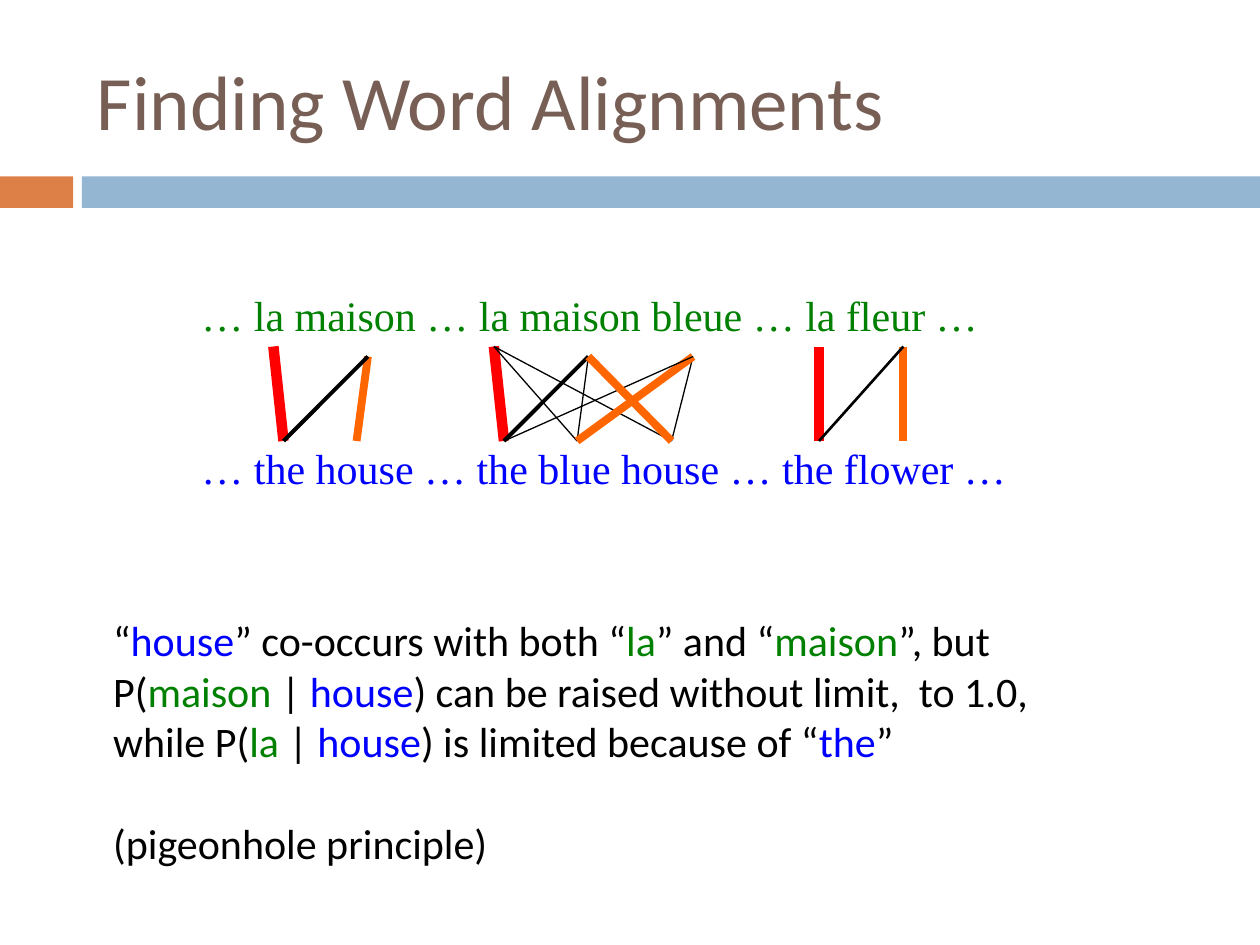
from dataclasses import dataclass

from lxml import etree
from pptx import Presentation
from pptx import util as u
from pptx.dml.color import RGBColor
from pptx.enum import shapes, text
from pptx.oxml.ns import qn


@dataclass(frozen=True)
class Theme:
    title: str = "775F55"
    accent: str = "DD8047"
    band: str = "94B6D2"
    ink: str = "000000"
    french: str = "008000"
    english: str = "0000FF"
    strong: str = "FF0000"
    good: str = "FF6600"
    sans: str = "Calibri"
    serif: str = "Times New Roman"
    title_size: float = 44
    body_size: float = 24


THEME = Theme()


def add_run(p, content, *, font, size, color):
    r = p.add_run()
    r.text = content
    r.font.name = font
    r.font.size = u.Pt(size)
    r.font.color.rgb = RGBColor.from_string(color)


class Builder:
    def __init__(self, slide, theme):
        self.s = slide
        self.theme = theme

    def bar(self, left, top, width, height, color):
        sp = self.s.shapes.add_shape(
            shapes.MSO_SHAPE.RECTANGLE,
            *map(u.Inches, (left, top, width, height)))
        sp.shadow.inherit = False
        sp.fill.solid()
        sp.fill.fore_color.rgb = RGBColor.from_string(color)
        sp.line.fill.background()

    def line(self, start, end, color, weight):
        sp = self.s.shapes.add_connector(
            shapes.MSO_CONNECTOR.STRAIGHT, *map(u.Inches, (*start, *end)))
        sp.line.color.rgb = RGBColor.from_string(color)
        sp.line.width = u.Pt(weight)
        etree.SubElement(sp._element.spPr, qn("a:effectLst"))

    def text(self, box, paragraphs, *, font, size, anchor=text.MSO_ANCHOR.TOP,
             last_gap=0):
        """Each paragraph is a list of (text, color) runs."""
        tf = self.s.shapes.add_textbox(*map(u.Inches, box)).text_frame
        tf.word_wrap = True
        tf.vertical_anchor = anchor
        for i, runs in enumerate(paragraphs):
            p = tf.add_paragraph() if i else tf.paragraphs[0]
            for content, color in runs:
                add_run(p, content, font=font, size=size, color=color)
        p.space_before = u.Pt(last_gap)


def main():
    prs = Presentation()
    prs.slide_width, prs.slide_height = u.Inches(10), u.Inches(7.5)
    t = THEME
    b = Builder(prs.slides.add_slide(prs.slide_layouts[6]), t)

    # Header band and title
    b.bar(0, 1.4, 0.58, 0.25, t.accent)
    b.bar(0.65, 1.4, 9.35, 0.25, t.band)
    b.text((0.67, 0.25, 8.92, 1.08), [[("Finding Word Alignments", t.title)]],
           font=t.sans, size=t.title_size, anchor=text.MSO_ANCHOR.MIDDLE)

    # Word positions: French above, English below
    high, mid, low = 2.75, 2.83, 3.5
    la1, maison1, the1, house1 = (2.17, high), (2.92, mid), (2.25, low), (2.83, low)
    la2, maison2, bleue = (3.92, high), (4.67, mid), (5.5, mid)
    the2, blue, house2 = (4, low), (4.58, low), (5.33, low)
    la3, fleur, the3, flower = (6.5, high), (7.17, high), (6.5, low), (7.17, low)

    # Alignment links, back to front
    strong, good = (t.strong, 6), (t.good, 4.5)
    medium, light, thin = (t.ink, 2.25), (t.ink, 1.5), (t.ink, 0.75)
    links = [
        (la1, the1, strong), (maison1, house1, good), (maison1, the1, medium),
        (la3, the3, strong), (fleur, flower, good), (fleur, the3, light),
        (la2, the2, strong), (la2, blue, thin), (maison2, blue, thin),
        (maison2, the2, medium), (la2, house2, thin), (bleue, house2, thin),
        (bleue, blue, good), (bleue, the2, thin), (maison2, house2, good),
    ]
    for french, english, style in links:
        b.line(french, english, *style)

    # Explanation
    house, la, maison, the = (("house", t.english), ("la", t.french),
                              ("maison", t.french), ("the", t.english))

    def ink(content):
        return content, t.ink

    b.text((0.8, 4.83, 8.93, 2.12), [
        [ink("“"), house, ink("” co-occurs with both “"), la,
         ink("” and “"), maison, ink("”, but")],
        [ink("P("), maison, ink(" | "), house,
         ink(") can be raised without limit,  to 1.0,")],
        [ink("while P("), la, ink(" | "), house,
         ink(") is limited because of “"), the, ink("”")],
        [ink("(pigeonhole principle)")],
    ], font=t.sans, size=t.body_size, last_gap=29.3)

    # Parallel sentences
    b.text((1.5, 2.25, 6.65, 1.72), [
        [("… la maison … la maison bleue … la fleur …", t.french)],
        [("… the house … the blue house … the flower …", t.english)],
    ], font=t.serif, size=t.body_size, last_gap=58.6)

    prs.save("out.pptx")


if __name__ == "__main__":
    main()
